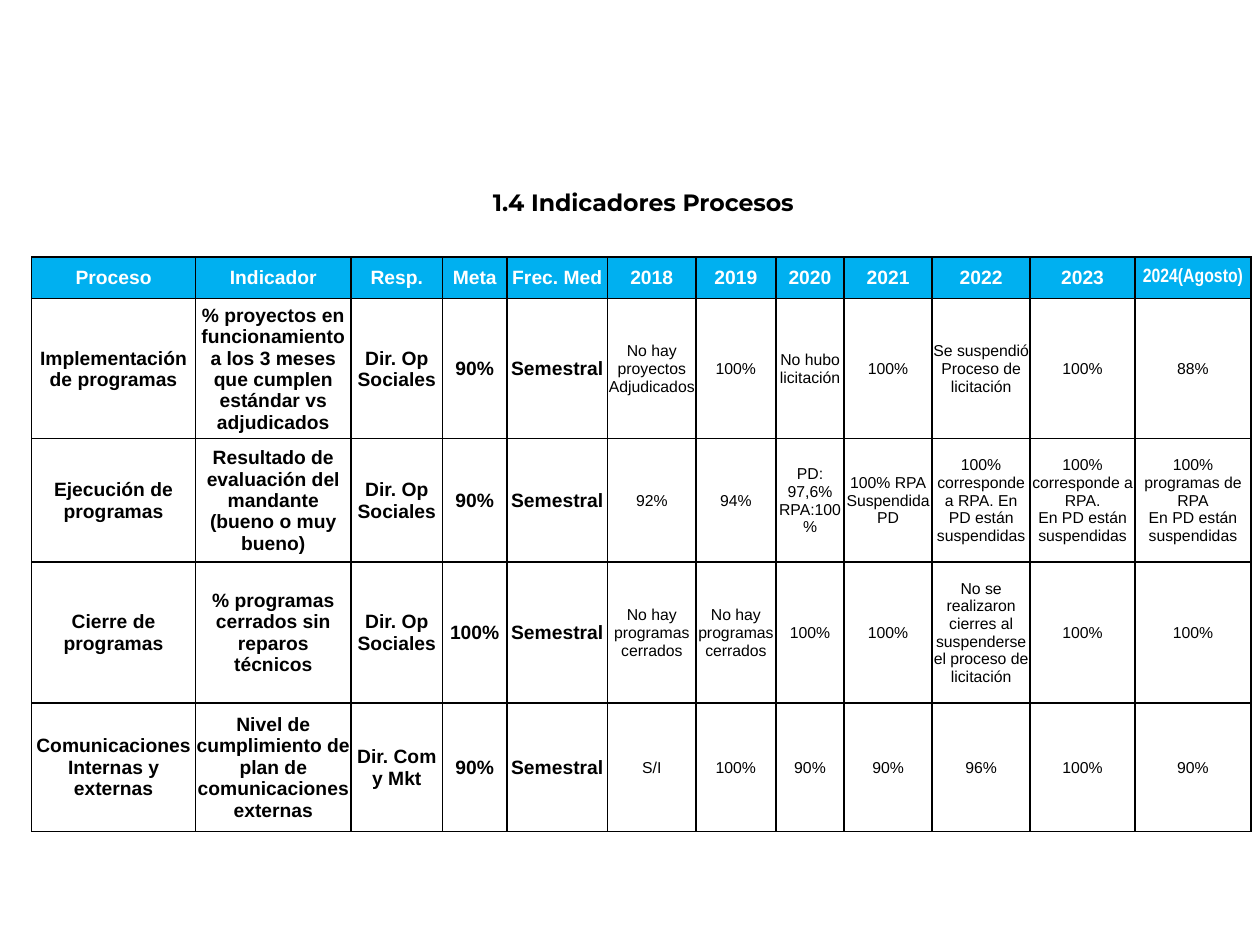
import pptx
import pptx.util
import pptx.dml.color
import pptx.enum.text
from lxml import etree
from pptx.oxml.ns import qn

Cm, Pt = pptx.util.Cm, pptx.util.Pt
RGBColor = pptx.dml.color.RGBColor
CENTER = pptx.enum.text.PP_ALIGN.CENTER
MIDDLE = pptx.enum.text.MSO_ANCHOR.MIDDLE

BLACK = RGBColor(0x00, 0x00, 0x00)
WHITE = RGBColor(0xFF, 0xFF, 0xFF)
SKY = RGBColor(0x00, 0xB0, 0xF0)

# Content: a tuple holds paragraphs, "\n" is a line break
TITLE = "1.4 Indicadores Procesos"
HEADER = ["Proceso", "Indicador", "Resp.", "Meta", "Frec. Med", "2018", "2019",
          "2020", "2021", "2022", "2023", "2024(Agosto)"]
ROWS = [
    ["Implementación de programas",
     "% proyectos en funcionamiento a los 3 meses que cumplen estándar vs adjudicados",
     "Dir. Op Sociales", "90%", "Semestral",
     "No hay proyectos Adjudicados", "100%", "No hubo licitación", "100%",
     "Se suspendió Proceso de licitación", "100%", "88%"],
    ["Ejecución de programas",
     ("Resultado de evaluación del mandante", "(bueno o muy bueno)"),
     "Dir. Op Sociales", "90%", "Semestral",
     "92%", "94%", ("PD: 97,6%", "RPA:100%"), "100% RPA\nSuspendida PD",
     "100% corresponde a RPA. En PD están suspendidas",
     "100% corresponde a RPA.\nEn PD están suspendidas",
     ("100% programas de RPA", "En PD están suspendidas")],
    ["Cierre de programas", "% programas cerrados sin reparos técnicos",
     "Dir. Op Sociales", "100%", "Semestral",
     "No hay programas cerrados", "No hay programas cerrados", "100%", "100%",
     "No se realizaron cierres al suspenderse el proceso de licitación",
     "100%", "100%"],
    ["Comunicaciones Internas y externas",
     "Nivel de cumplimiento de plan de comunicaciones externas",
     "Dir. Com y Mkt", "90%", "Semestral",
     "S/I", "100%", "90%", "90%", "96%", "100%", "90%"],
]
COL_WIDTHS = [3.3, 3.14, 1.84, 1.3, 2.03, 1.78, 1.61, 1.38, 1.77, 1.98, 2.11, 2.34]
ROW_HEIGHTS = [0.84, 2.82, 2.49, 2.84, 2.59]
FIRST_YEAR = HEADER.index("2018")


def write(tf, content, font, size, bold, color):
    paragraphs = content if isinstance(content, tuple) else (content,)
    for i, text in enumerate(paragraphs):
        p = tf.paragraphs[0] if i == 0 else tf.add_paragraph()
        p.alignment = CENTER
        for j, line in enumerate(text.split("\n")):
            if j:
                p.add_line_break()
            r = p.add_run()
            r.text = line
            r.font.name, r.font.size, r.font.bold = font, Pt(size), bold
            r.font.color.rgb = color


def add_borders(cell):
    tc_pr = cell._tc.get_or_add_tcPr()
    for side in ("a:lnL", "a:lnR", "a:lnT", "a:lnB"):
        ln = etree.SubElement(tc_pr, qn(side), w=str(Pt(1)))
        fill = etree.SubElement(ln, qn("a:solidFill"))
        etree.SubElement(fill, qn("a:srgbClr"), val=str(BLACK))


prs = pptx.Presentation()
prs.slide_width, prs.slide_height = Cm(25.4), Cm(19.05)
s = prs.slides.add_slide(prs.slide_layouts[5])

# Title
title = s.shapes.title
title.left, title.top, title.width, title.height = Cm(5.25), Cm(3.3), Cm(15.44), Cm(1.55)
title.text_frame.auto_size = pptx.enum.text.MSO_AUTO_SIZE.NONE
title.text_frame.vertical_anchor = MIDDLE
write(title.text_frame, TITLE, "Montserrat", 13.5, True, BLACK)

# Indicator table
table = s.shapes.add_table(len(ROWS) + 1, len(HEADER), Cm(0.64), Cm(5.18),
                           Cm(sum(COL_WIDTHS)), Cm(sum(ROW_HEIGHTS))).table
table.first_row = table.horz_banding = False
for col, width in zip(table.columns, COL_WIDTHS):
    col.width = Cm(width)
for row, height in zip(table.rows, ROW_HEIGHTS):
    row.height = Cm(height)

for i, values in enumerate([HEADER] + ROWS):
    for j, content in enumerate(values):
        cell = table.cell(i, j)
        is_header, is_year = i == 0, j >= FIRST_YEAR
        year_header = is_header and is_year
        cell.vertical_anchor = MIDDLE
        cell.margin_left = cell.margin_right = Cm(0.1 if year_header else 0.02)
        cell.margin_top = Cm(0 if year_header else 0.02)
        cell.margin_bottom = Cm(0)
        add_borders(cell)
        cell.fill.solid()
        cell.fill.fore_color.rgb = SKY if is_header else WHITE
        strong = is_header or not is_year
        font = "Arial Narrow" if content == HEADER[-1] else "Arial"
        write(cell.text_frame, content, font, 11 if strong else 9, strong,
              WHITE if is_header else BLACK)

prs.save("out.pptx")
